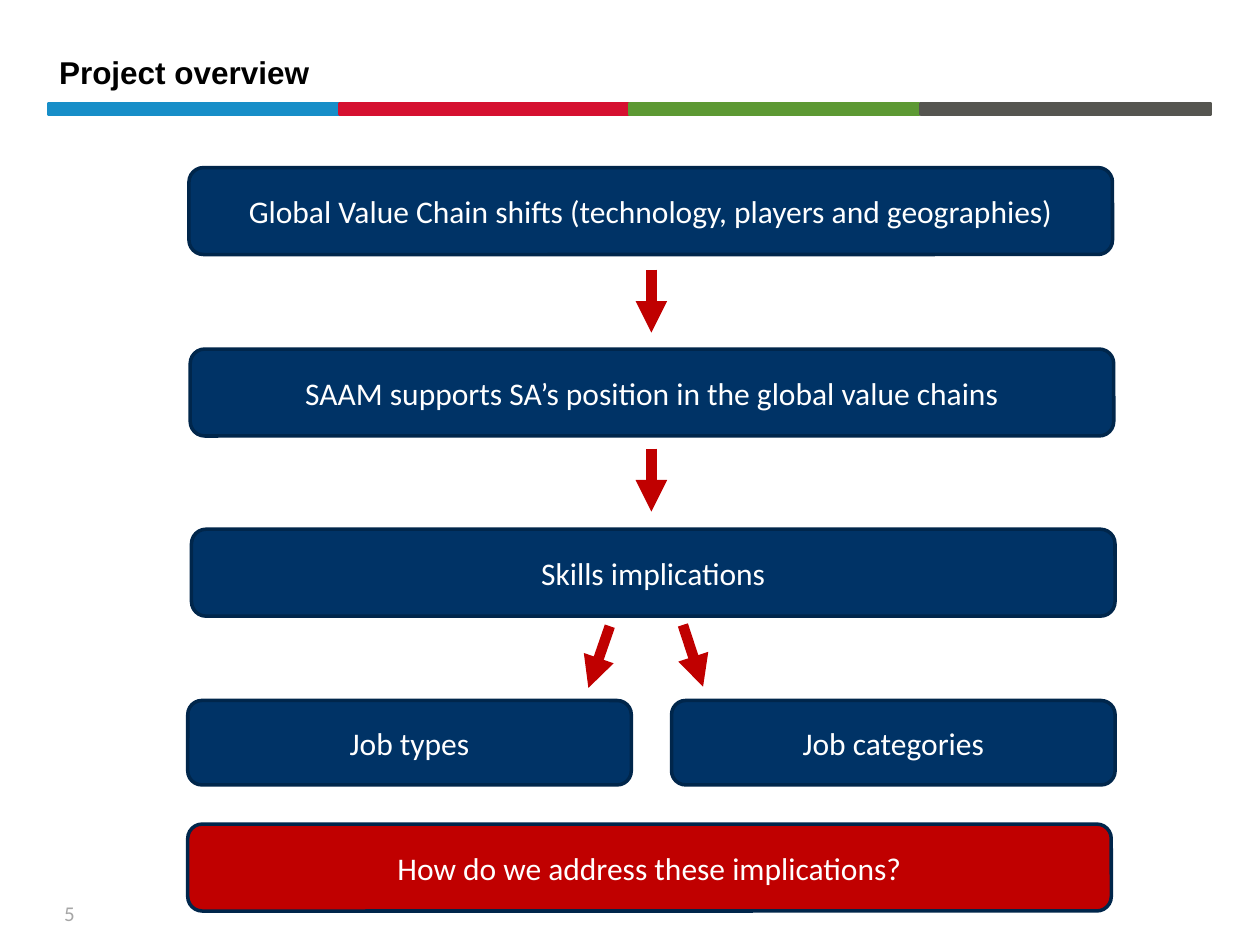
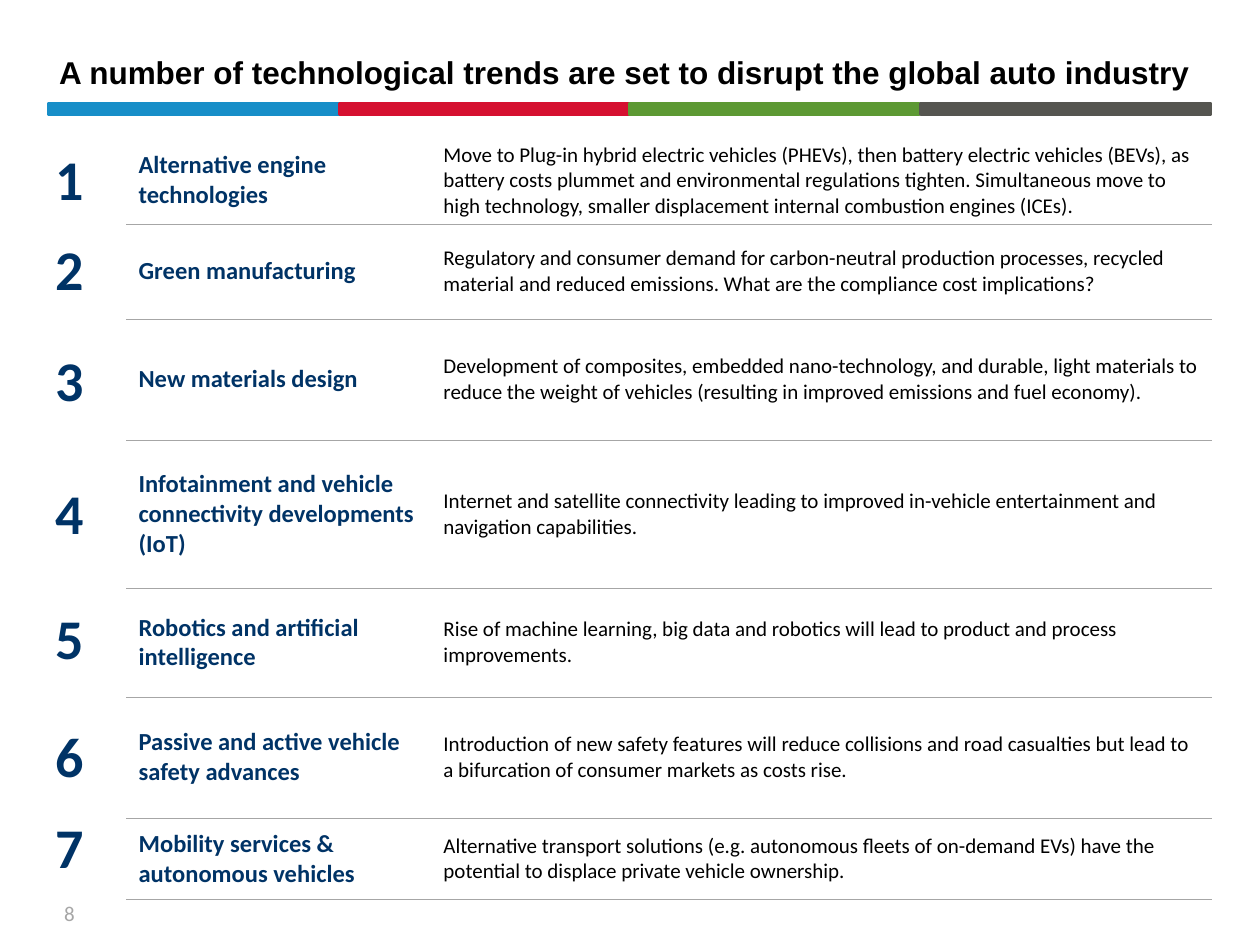
"""Build two slides on shifts in the auto industry: a flow of steps and a table of trends."""
from lxml.etree import SubElement as Sub
from pptx import Presentation
from pptx.dml.color import RGBColor as RGB
from pptx.enum.shapes import MSO_CONNECTOR as LINK, MSO_SHAPE as FORM
from pptx.enum.text import MSO_ANCHOR as ANCHOR, PP_ALIGN as ALIGN
from pptx.oxml.ns import qn
from pptx.util import Emu, Pt

HUE = {
    "blue": "178EC8", "pink": "D51030", "green": "5D9933", "slate": "555550",
    "navy": "003366", "edge": "00264B", "red": "C00000", "gray": "A6A6A6",
    "black": "000000", "white": "FFFFFF",
}

deck = Presentation()
deck.slide_width, deck.slide_height = Emu(9144000), Emu(6858000)
COL, ROW = deck.slide_width / 100, deck.slide_height / 75


def write(host, text, size=18, hue="black", bold=False, face="Calibri",
          align=ALIGN.LEFT, anchor=ANCHOR.TOP):
    """Put formatted text in a shape or a table cell."""
    frame = host.text_frame
    frame.word_wrap = True
    frame.vertical_anchor = anchor
    para = frame.paragraphs[0]
    para.alignment = align
    run = para.add_run()
    run.text = text
    font = run.font
    font.size, font.bold, font.name = Pt(size), bold, face
    font.color.rgb = RGB.from_string(HUE[hue])


def place(slide, x, y, wide, high, form=None, fill=None, edge=None):
    """Add a shape, or a text box when no form is given, by columns and rows."""
    box = [Emu(int(n)) for n in (x * COL, y * ROW, wide * COL, high * ROW)]
    if form is None:
        return slide.shapes.add_textbox(*box)
    shape = slide.shapes.add_shape(form, *box)
    shape.shadow.inherit = False
    shape.fill.solid()
    shape.fill.fore_color.rgb = RGB.from_string(HUE[fill])
    shape.line.color.rgb = RGB.from_string(HUE[edge])
    shape.line.width = Pt(2)
    return shape


slides = []
for title, page in [
    ("Project overview", "5"),
    ("A number of technological trends are set to disrupt the global auto industry", "8"),
]:
    slide = deck.slides.add_slide(deck.slide_layouts[6])
    for i, hue in enumerate(["blue", "pink", "green", "slate"]):
        place(slide, 3.9 + 23.05 * i, 8.2, 23, 0.9, FORM.RECTANGLE, hue, hue)
    write(place(slide, 3.7, 0.8, 92.5, 6.9), title, bold=True, face="Arial",
          anchor=ANCHOR.BOTTOM)
    write(place(slide, 4.1, 71, 24.2, 4), page, size=12, hue="gray")
    slides.append(slide)
flow, trend = slides

for x, y, wide, high, fill, text in [
    (15, 13.3, 73.3, 6.9, "navy",
     "Global Value Chain shifts (technology, players and geographies)"),
    (15.1, 27.7, 73.3, 6.9, "navy", "SAAM supports SA’s position in the global value chains"),
    (15.2, 42, 73.3, 6.9, "navy", "Skills implications"),
    (14.9, 55.6, 35.2, 6.7, "navy", "Job types"),
    (53.3, 55.6, 35.2, 6.7, "navy", "Job categories"),
    (14.9, 65.4, 73.3, 6.9, "red", "How do we address these implications?"),
]:
    step = place(flow, x, y, wide, high, FORM.ROUNDED_RECTANGLE, fill, "edge")
    write(step, text, hue="white", align=ALIGN.CENTER, anchor=ANCHOR.MIDDLE)

for x, y, lean, drop in [
    (51.7, 21.4, 0, 5), (51.7, 35.6, 0, 5), (48.4, 49.7, -1.7, 4.9), (54.2, 49.6, 1.6, 4.9),
]:
    ends = x * COL, y * ROW, (x + lean) * COL, (y + drop) * ROW
    arrow = flow.shapes.add_connector(LINK.STRAIGHT, *[Emu(int(n)) for n in ends])
    arrow.line.color.rgb = RGB.from_string(HUE["red"])
    arrow.line.width = Pt(6)
    Sub(arrow.line._get_or_add_ln(), qn("a:tailEnd"), type="triangle")
    Sub(arrow._element.spPr, qn("a:effectLst"))

TRENDS = [
    (6.5, 10.8, "Alternative engine technologies",
     "Move to Plug-in hybrid electric vehicles (PHEVs), then battery electric vehicles (BEVs), "
     "as battery costs plummet and environmental regulations tighten. Simultaneous move to "
     "high technology, smaller displacement internal combustion engines (ICEs)."),
    (7.5, 17.9, "Green manufacturing",
     "Regulatory and consumer demand for carbon-neutral production processes, recycled "
     "material and reduced emissions. What are the compliance cost implications?"),
    (9.6, 26.7, "New materials design",
     "Development of composites, embedded nano-technology, and durable, light materials "
     "to reduce the weight of vehicles (resulting in improved emissions and fuel economy)."),
    (11.8, 37.3, "Infotainment and vehicle connectivity developments (IoT)",
     "Internet and satellite connectivity leading to improved in-vehicle entertainment and "
     "navigation capabilities."),
    (8.6, 47.2, "Robotics and artificial intelligence",
     "Rise of machine learning, big data and robotics will lead to product and process "
     "improvements."),
    (9.6, 56.6, "Passive and active vehicle safety advances",
     "Introduction of new safety features will reduce collisions and road casualties but lead "
     "to a bifurcation of consumer markets as costs rise."),
    (6.5, 63.8, "Mobility services & autonomous vehicles",
     "Alternative transport solutions (e.g. autonomous fleets of on-demand EVs) have the "
     "potential to displace private vehicle ownership."),
]
tall = sum(item[0] for item in TRENDS)
area = [Emu(int(n)) for n in (10 * COL, 10.8 * ROW, 86.2 * COL, tall * ROW)]
table = trend.shapes.add_table(len(TRENDS), 2, *area).table
table.first_row = table.horz_banding = False
for i, wide in enumerate([24.2, 62]):
    table.columns[i].width = Emu(int(wide * COL))

for i, (high, top, name, note) in enumerate(TRENDS):
    table.rows[i].height = Emu(int(high * ROW))
    for j, look in enumerate([dict(text=name, size=14, hue="navy", bold=True),
                              dict(text=note, size=12)]):
        cell = table.cell(i, j)
        write(cell, **look)
        cell.vertical_anchor = ANCHOR.MIDDLE
        props = cell._tc.get_or_add_tcPr()
        for side in "LRTB":
            rule = Sub(props, qn("a:ln" + side), w=str(Pt(0.25)))
            if side == "B" or side == "T" and i:
                Sub(Sub(rule, qn("a:solidFill")), qn("a:srgbClr"), val=HUE["gray"])
            else:
                Sub(rule, qn("a:noFill"))
        cell.fill.background()
    write(place(trend, 1.7, top, 7.6, 6.7), str(i + 1), size=32, hue="navy", bold=True,
          align=ALIGN.CENTER, anchor=ANCHOR.MIDDLE)

deck.save("out.pptx")
